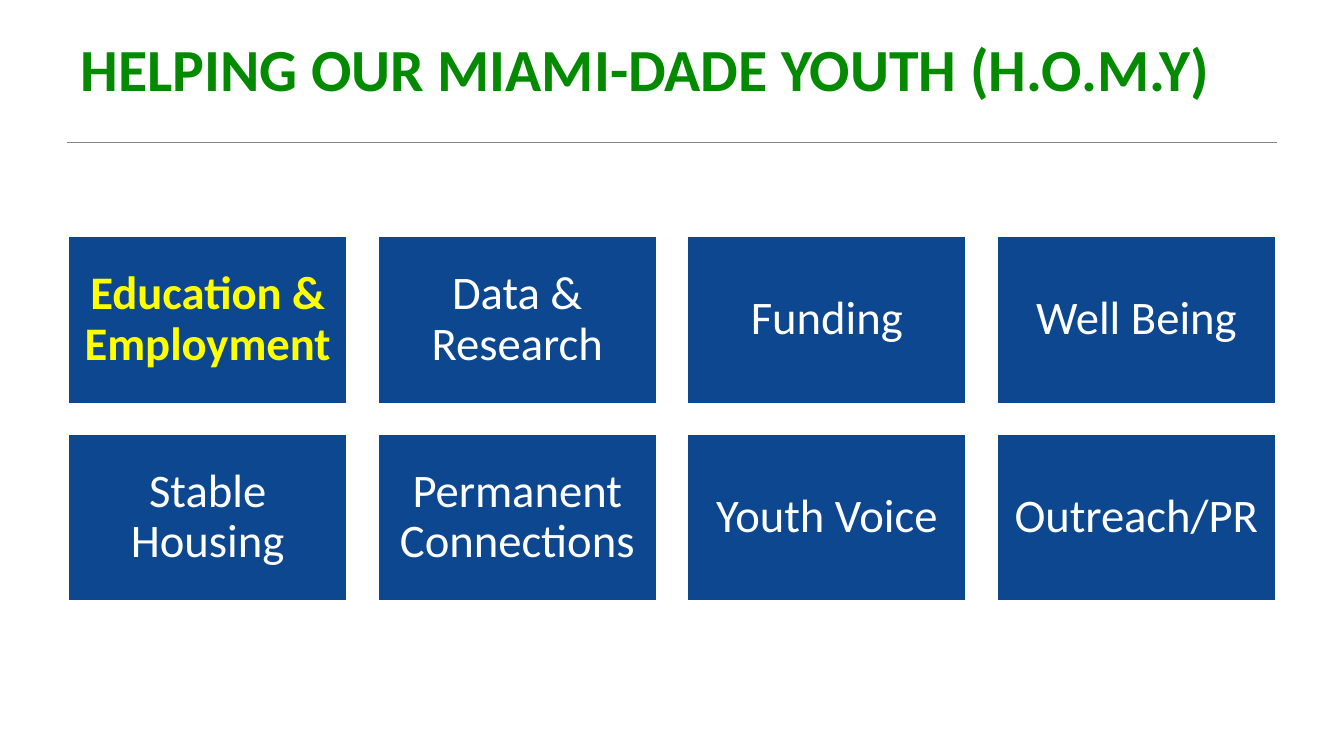
from dataclasses import dataclass

from pptx import Presentation
from pptx.dml.color import RGBColor
from pptx.enum.shapes import MSO_CONNECTOR, MSO_SHAPE
from pptx.enum.text import MSO_ANCHOR, PP_ALIGN
from pptx.oxml.ns import qn
from pptx.slide import Slide
from pptx.text.text import TextFrame
from pptx.util import Inches, Pt
from lxml.etree import SubElement

FONT = "Calibri"
GREEN, BLUE, YELLOW, WHITE, GREY = "038A00", "0C4790", "FFFF00", "FFFFFF", "858585"

# Tile grid, in inches: four columns spread evenly over the span
COLS = 4
LEFT, TOP, SPAN = 0.5, 1.75, 9
WIDE, HIGH = 2.09, 1.26
STEP_X, STEP_Y = (SPAN - WIDE) / (COLS - 1), 1.47


@dataclass
class Tile:
    label: str
    color: str = WHITE
    bold: bool = False


TILES = [
    Tile("Education & Employment", YELLOW, True),
    Tile("Data & Research"),
    Tile("Funding"),
    Tile("Well Being"),
    Tile("Stable Housing"),
    Tile("Permanent Connections"),
    Tile("Youth Voice"),
    Tile("Outreach/PR"),
]


def paint(color: str) -> RGBColor:
    return RGBColor.from_string(color)


def set_inset(frame: TextFrame, side: float, edge: float) -> None:
    frame.margin_left = frame.margin_right = Inches(side)
    frame.margin_top = frame.margin_bottom = Inches(edge)
    frame.word_wrap = True


def add_run(frame: TextFrame, text: str, size: int, color: str, bold: bool) -> None:
    run = frame.paragraphs[0].add_run()
    run.text = text
    run.font.name = FONT
    run.font.size = Pt(size)
    run.font.bold = bold
    run.font.color.rgb = paint(color)


def add_title(slide: Slide, text: str) -> None:
    box = slide.shapes.add_textbox(
        Inches(LEFT), Inches(0.19), Inches(SPAN), Inches(0.46)
    )
    frame = box.text_frame
    set_inset(frame, 0.1, 0.05)
    frame.vertical_anchor = MSO_ANCHOR.TOP
    add_run(frame, text, 32, GREEN, True)


def add_rule(slide: Slide) -> None:
    rule = slide.shapes.add_connector(
        MSO_CONNECTOR.STRAIGHT,
        Inches(LEFT), Inches(1.06), Inches(LEFT + SPAN), Inches(1.06),
    )
    rule.line.color.rgb = paint(GREY)
    rule.line.width = Pt(1)
    SubElement(rule.element.spPr, qn("a:effectLst"))


def add_tile(slide: Slide, tile: Tile, left: float, top: float) -> None:
    box = slide.shapes.add_shape(
        MSO_SHAPE.RECTANGLE, Inches(left), Inches(top), Inches(WIDE), Inches(HIGH)
    )
    box.shadow.inherit = False
    box.fill.solid()
    box.fill.fore_color.rgb = paint(BLUE)
    box.line.color.rgb = paint(WHITE)
    box.line.width = Pt(2)

    frame = box.text_frame
    set_inset(frame, 0.1, 0.1)
    frame.vertical_anchor = MSO_ANCHOR.MIDDLE
    frame.paragraphs[0].alignment = PP_ALIGN.CENTER
    frame.paragraphs[0].line_spacing = 0.9
    add_run(frame, tile.label, 25, tile.color, tile.bold)


def main() -> None:
    # Widescreen page, 16 by 9
    deck = Presentation()
    deck.slide_width = Inches(10)
    deck.slide_height = Inches(10 * 9 / 16)
    slide = deck.slides.add_slide(deck.slide_layouts[6])

    # Heading
    add_rule(slide)
    add_title(slide, "HELPING OUR MIAMI-DADE YOUTH (H.O.M.Y)")

    # Grid of work areas
    for i, tile in enumerate(TILES):
        row, col = divmod(i, COLS)
        add_tile(slide, tile, LEFT + col * STEP_X, TOP + row * STEP_Y)

    deck.save("out.pptx")


if __name__ == "__main__":
    main()
